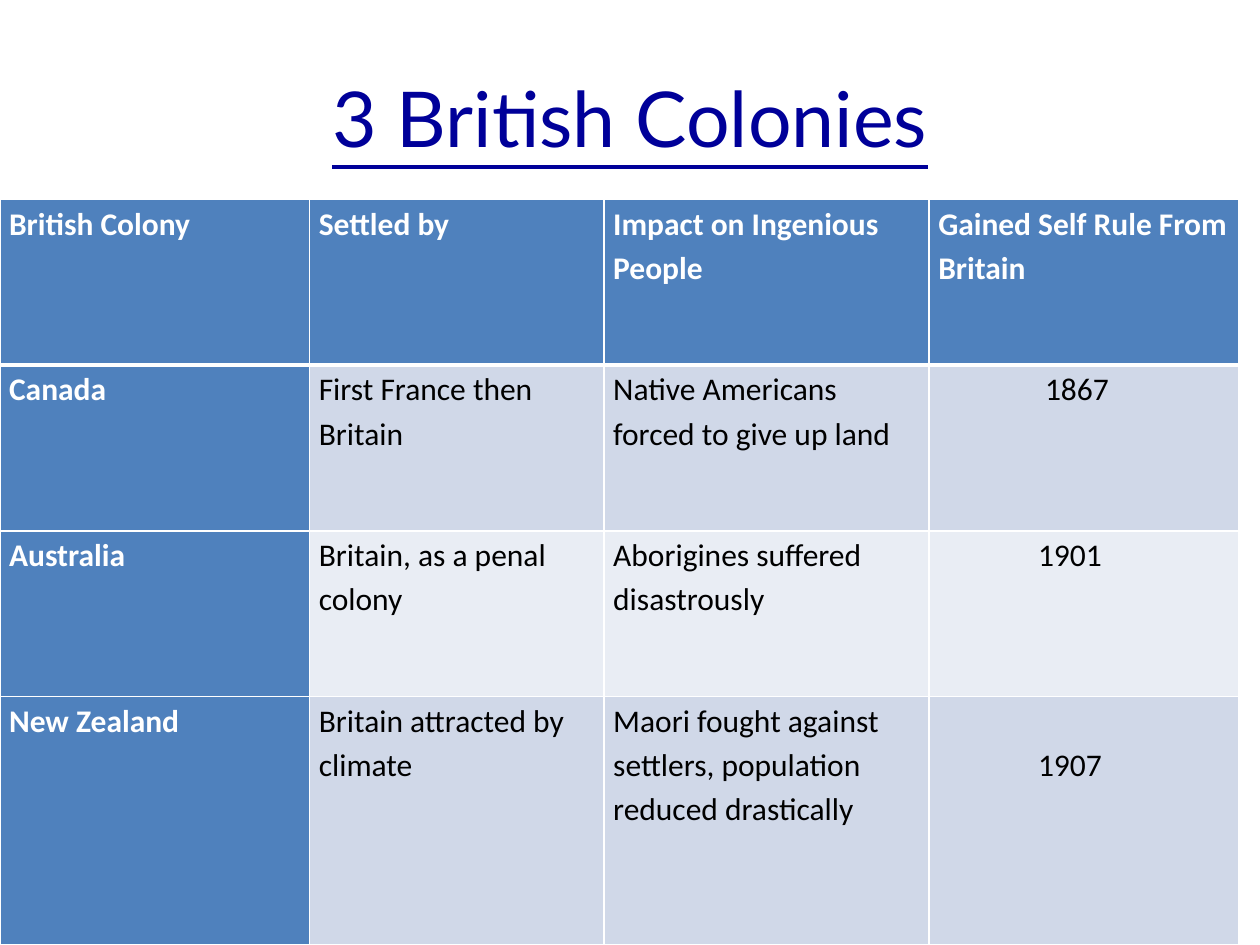
from lxml import etree
from pptx import Presentation
from pptx.dml.color import RGBColor
from pptx.enum.text import MSO_ANCHOR, PP_ALIGN
from pptx.oxml.ns import qn
from pptx.util import Pt

CENTER, LEFT = PP_ALIGN.CENTER, PP_ALIGN.LEFT
MIDDLE = MSO_ANCHOR.MIDDLE

# Content
TITLE = "3 British Colonies"
ROWS = [
    ("British Colony", "Settled by", "Impact on Ingenious People",
     "Gained Self Rule From Britain"),
    ("Canada", "First France then Britain",
     "Native Americans forced to give up land", "1867"),
    ("Australia", "Britain, as a penal colony",
     "Aborigines suffered disastrously", "1901"),
    ("New Zealand", "Britain attracted by climate",
     "Maori fought against settlers, population reduced drastically", "1907"),
]

# Layout in points
SLIDE_SIZE = (720, 540)
TITLE_BOX = (36, 21.6, 648, 90)
TABLE_LEFT, TABLE_TOP = 0, 114
COLUMN_WIDTHS = (177, 168.25, 185.75, 177)
ROW_HEIGHTS = (94.67, 94.67, 94.67, 142)
CELL_INSET = 5.2
YEAR_INDENTS = {"1867": 61, "1901": 57, "1907": 57}
YEAR_DROPS = {"1907": 25.2}

THEME = {
    "title_font": "Lato", "title_size": 44, "title": "000099",
    "table_font": "Calibri", "table_size": 18,
    "heading": "FFFFFF", "body": "000000", "border": "FFFFFF",
    "heading_fill": "4F81BD", "band_fills": ("E9EDF4", "D0D8E8"),
}


def write_text(frame, text, *, font, size, color, bold=False,
               underline=False, align=LEFT, line_spacing=None):
    paragraph = frame.paragraphs[0]
    paragraph.alignment = align
    paragraph.line_spacing = line_spacing
    run = paragraph.add_run()
    run.text = text
    run.font.name = font
    run.font.size = Pt(size)
    run.font.bold = bold
    run.font.underline = underline
    run.font.color.rgb = RGBColor.from_string(color)


def set_borders(cell, widths):
    properties = cell._tc.get_or_add_tcPr()
    for side, width in widths.items():
        line = etree.SubElement(properties, qn(f"a:ln{side}"), w=str(Pt(width)))
        fill = etree.SubElement(line, qn("a:solidFill"))
        etree.SubElement(fill, qn("a:srgbClr"), val=THEME["border"])


def format_cell(cell, text, row, column):
    is_heading = row == 0 or column == 0
    cell.margin_left = Pt(CELL_INSET + YEAR_INDENTS.get(text, 0))
    cell.margin_right = Pt(CELL_INSET)
    cell.margin_top = Pt(YEAR_DROPS.get(text, 0))
    cell.margin_bottom = 0
    # A thicker rule separates the header row from the body
    set_borders(cell, {"L": 1, "R": 1, "T": 3 if row == 1 else 1,
                       "B": 3 if row == 0 else 1})
    fill = THEME["heading_fill"] if is_heading else THEME["band_fills"][row % 2]
    cell.fill.solid()
    cell.fill.fore_color.rgb = RGBColor.from_string(fill)
    write_text(cell.text_frame, text, font=THEME["table_font"],
               size=THEME["table_size"], bold=is_heading, line_spacing=1.15,
               color=THEME["heading" if is_heading else "body"])


def add_title(slide):
    title = slide.shapes.title
    title.left, title.top, title.width, title.height = map(Pt, TITLE_BOX)
    title.text_frame.vertical_anchor = MIDDLE
    write_text(title.text_frame, TITLE, font=THEME["title_font"],
               size=THEME["title_size"], color=THEME["title"],
               underline=True, align=CENTER)


def add_colony_table(slide):
    table = slide.shapes.add_table(
        len(ROWS), len(COLUMN_WIDTHS), Pt(TABLE_LEFT), Pt(TABLE_TOP),
        Pt(sum(COLUMN_WIDTHS)), Pt(sum(ROW_HEIGHTS))).table
    table.horz_banding = False
    table.first_col = True
    for column, width in zip(table.columns, COLUMN_WIDTHS):
        column.width = Pt(width)
    for row, height in zip(table.rows, ROW_HEIGHTS):
        row.height = Pt(height)
    for row_index, texts in enumerate(ROWS):
        for column_index, text in enumerate(texts):
            format_cell(table.cell(row_index, column_index), text,
                        row_index, column_index)


def main():
    presentation = Presentation()
    presentation.slide_width, presentation.slide_height = map(Pt, SLIDE_SIZE)
    title_only = presentation.slide_layouts.get_by_name("Title Only")
    slide = presentation.slides.add_slide(title_only)
    add_title(slide)
    add_colony_table(slide)
    presentation.save("out.pptx")


if __name__ == "__main__":
    main()
